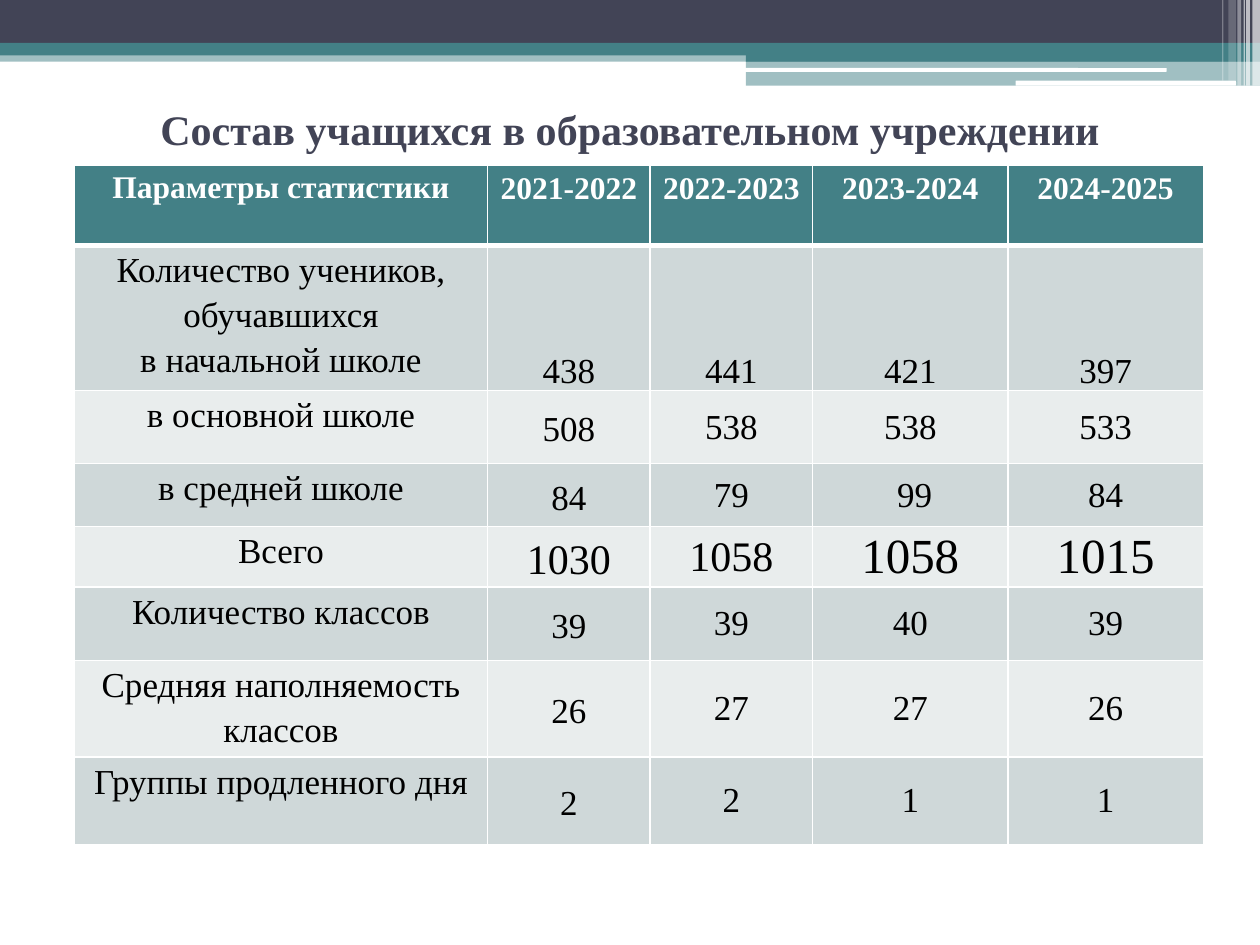
from dataclasses import dataclass

from lxml.etree import SubElement
from pptx import Presentation
from pptx.dml.color import RGBColor
from pptx.enum.shapes import MSO_SHAPE
from pptx.enum.text import MSO_ANCHOR, PP_ALIGN
from pptx.oxml.ns import qn
from pptx.util import Inches, Pt

GRID_COLUMNS, GRID_ROWS = 1000, 750
SLIDE_WIDTH, SLIDE_HEIGHT = Inches(10), Inches(7.5)
FONT = "Times New Roman"
DARK, TEAL, WHITE, BLACK = "424456", "438086", "FFFFFF", "000000"
BANDS = ("CFD8D9", "E9EDED")

BARS = [
    (0, 40, 1000, 9, TEAL, 50),
    (0, 0, 1000, 34, DARK, 100),
    (0, 34, 1000, 10, TEAL, 100),
    (592, 39, 408, 10, TEAL, 100),
    (592, 48, 408, 20, TEAL, 50),
]
ROUNDED_BARS = [(591, 54, 335, 3, WHITE, 100), (806, 64, 175, 4, WHITE, 100)]
STRIPES = [
    (994, 0, 6, 68, WHITE, 65),
    (989, 0, 3, 68, WHITE, 65),
    (987, 0, 1, 68, WHITE, 60),
    (982, 0, 3, 68, WHITE, 40),
    (975, 0, 6, 64, WHITE, 20),
    (970, 0, 1, 64, WHITE, 30),
]

COLUMN_WIDTHS = [328, 129, 129, 155, 155]
ROW_HEIGHTS = [64, 109, 58, 50, 48, 58, 70, 70]
HEADINGS = ["Параметры статистики", "2021-2022", "2022-2023", "2023-2024", "2024-2025"]
RECORDS = [
    ["Количество учеников, обучавшихся\nв начальной школе", "438", "441", "421", "397"],
    ["в основной школе", "508", "538", "538", "533"],
    ["в средней школе", "84", "79", " 99", "84"],
    ["Всего", "1030", "1058", "1058", "1015"],
    ["Количество классов", "39", "39", "40", "39"],
    ["Средняя наполняемость классов", "26", "27", "27", "26"],
    ["Группы продленного дня", "2", "2", "1", "1"],
]
TOTAL_SIZES = [20, 24, 24, 28, 28]


@dataclass
class Box:
    left: int
    top: int
    width: int
    height: int

    def inner(self, left, top, width, height):
        return Box(self.left + left, self.top + top, width, height)

    def lengths(self):
        return (across(self.left), down(self.top), across(self.width), down(self.height))


def across(columns):
    return round(SLIDE_WIDTH * columns / GRID_COLUMNS)


def down(rows):
    return round(SLIDE_HEIGHT * rows / GRID_ROWS)


def color(value):
    return RGBColor.from_string(value)


def add_bar(slide, box, kind, fill, opacity):
    shape = slide.shapes.add_shape(kind, *box.lengths())
    shape.shadow.inherit = False
    shape.line.fill.background()
    shape.fill.solid()
    shape.fill.fore_color.rgb = color(fill)
    if opacity < 100:
        fill_color = shape.element.spPr.find(f"{qn('a:solidFill')}/{qn('a:srgbClr')}")
        SubElement(fill_color, qn("a:alpha"), val=str(opacity * 1000))


def add_banner(slide, box):
    groups = [
        (MSO_SHAPE.RECTANGLE, BARS),
        (MSO_SHAPE.ROUNDED_RECTANGLE, ROUNDED_BARS),
        (MSO_SHAPE.RECTANGLE, STRIPES),
    ]
    for kind, bars in groups:
        for *place, fill, opacity in bars:
            add_bar(slide, box.inner(*place), kind, fill, opacity)


def write(frame, text, size, text_color, bold, spacing=None):
    frame.text = text
    for paragraph in frame.paragraphs:
        paragraph.alignment = PP_ALIGN.CENTER
        paragraph.line_spacing = spacing
        font = paragraph.font
        font.name, font.size, font.bold = FONT, Pt(size), bold
        font.color.rgb = color(text_color)


def add_title(slide, box):
    frame = slide.shapes.add_textbox(*box.lengths()).text_frame
    frame.word_wrap = True
    frame.vertical_anchor = MSO_ANCHOR.MIDDLE
    write(frame, "Состав учащихся в образовательном учреждении", 24, DARK, True)


def add_borders(cell, widths):
    properties = cell._tc.get_or_add_tcPr()
    for side, width in widths.items():
        line = SubElement(properties, qn(f"a:ln{side}"), w=str(Pt(width)))
        fill = SubElement(line, qn("a:solidFill"))
        SubElement(fill, qn("a:srgbClr"), val=WHITE)


def style_cell(cell, row, column):
    header, label = row == 0, column == 0
    add_borders(cell, {"L": 1, "R": 1, "T": 3 if row == 1 else 1, "B": 3 if header else 1})
    cell.fill.solid()
    cell.fill.fore_color.rgb = color(TEAL if header else BANDS[(row - 1) % 2])
    cell.margin_left = cell.margin_right = across(7)
    cell.margin_top = cell.margin_bottom = down(5) if header and not label else 0
    if header or label:
        cell.vertical_anchor = MSO_ANCHOR.TOP
    else:
        cell.vertical_anchor = MSO_ANCHOR.BOTTOM if row == 1 else MSO_ANCHOR.MIDDLE


def add_statistics(slide, box):
    rows = [HEADINGS] + RECORDS
    table = slide.shapes.add_table(len(rows), len(HEADINGS), *box.lengths()).table
    for column, width in zip(table.columns, COLUMN_WIDTHS):
        column.width = across(width)
    for row, height in zip(table.rows, ROW_HEIGHTS):
        row.height = down(height)
    for row, texts in enumerate(rows):
        header = row == 0
        for column, text in enumerate(texts):
            cell = table.cell(row, column)
            style_cell(cell, row, column)
            size = 18 if header else TOTAL_SIZES[column] if texts[0] == "Всего" else 20
            spaced = column == 0 or (column == 1 and not header)
            write(cell.text_frame, text, size, WHITE if header else BLACK, header,
                  1.15 if spaced else None)


def main():
    presentation = Presentation()
    presentation.slide_width, presentation.slide_height = SLIDE_WIDTH, SLIDE_HEIGHT
    slide = presentation.slides.add_slide(presentation.slide_layouts[6])
    add_banner(slide, Box(0, 0, GRID_COLUMNS, 68))
    add_title(slide, Box(50, 55, 900, 94))
    add_statistics(slide, Box(59, 131, sum(COLUMN_WIDTHS), sum(ROW_HEIGHTS)))
    presentation.save("out.pptx")


if __name__ == "__main__":
    main()
